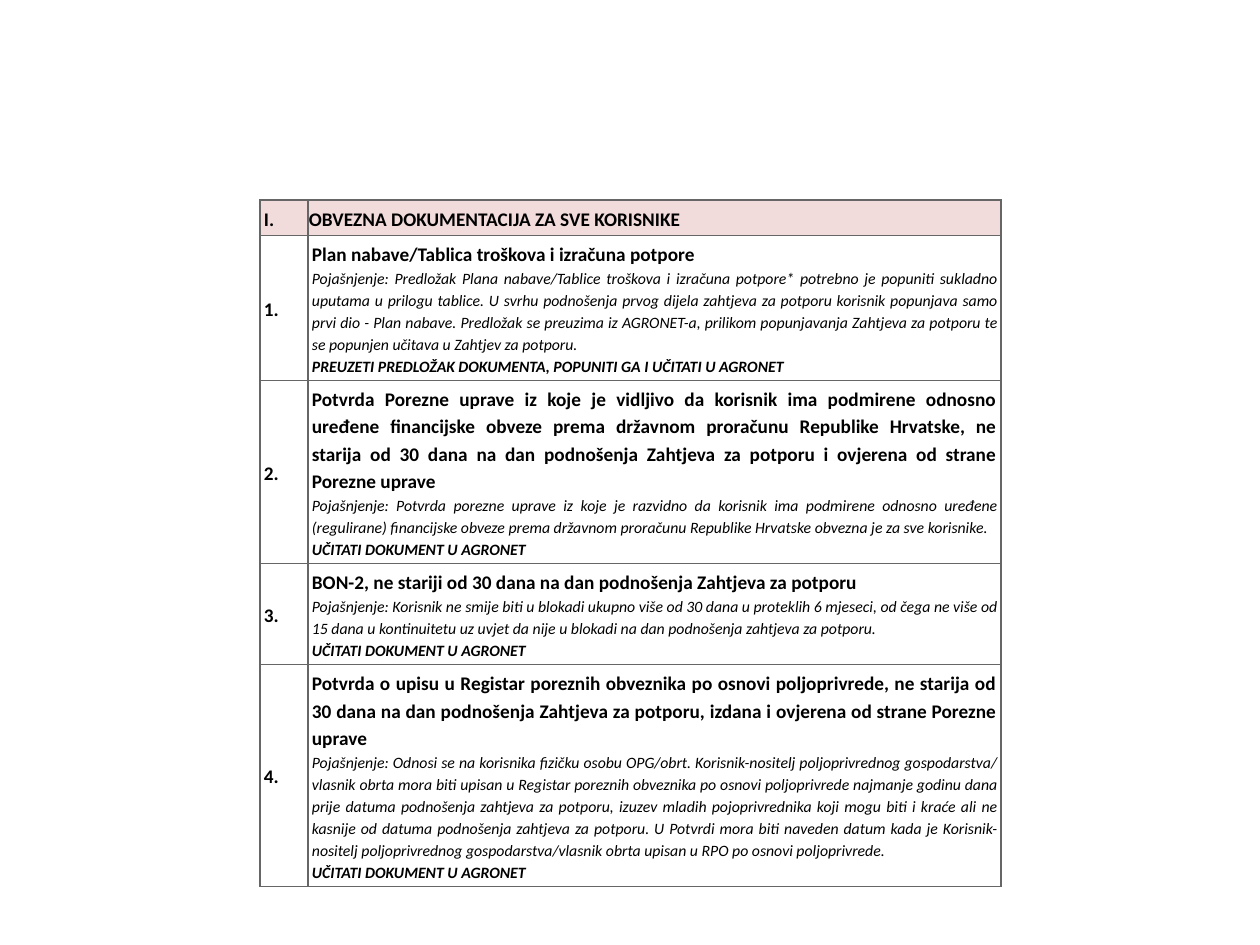
import pptx
import pptx.util
import pptx.dml.color
import pptx.enum.text
import pptx.oxml
import pptx.oxml.ns
from dataclasses import dataclass

PX = 914400 // 126


@dataclass(frozen=True)
class Theme:
    font: str = "Calibri"
    text: str = "000000"
    head: str = "F2DBDB"
    line: str = "666666"
    big: int = 11
    small: int = 9


theme = Theme()
color = pptx.dml.color.RGBColor.from_string


def border(cell):
    """Draw a 1 pt line on all four sides; call before setting the fill."""
    for side in ("L", "R", "T", "B"):
        cell._tc.get_or_add_tcPr().append(pptx.oxml.parse_xml(
            f'<a:ln{side} {pptx.oxml.ns.nsdecls("a")} w="12700">'
            f'<a:solidFill><a:srgbClr val="{theme.line}"/></a:solidFill>'
            f'</a:ln{side}>'))


def write(cell, lines, inset):
    """Fill a cell: first line is a bold heading, second a note, third a bold step."""
    cell.vertical_anchor = pptx.enum.text.MSO_ANCHOR.MIDDLE
    cell.margin_left = cell.margin_right = inset * PX
    cell.margin_top = cell.margin_bottom = inset * PX
    cell.text_frame.text = "\n".join(lines)
    for i, para in enumerate(cell.text_frame.paragraphs):
        para.alignment = pptx.enum.text.PP_ALIGN.JUSTIFY
        para.line_spacing = 1.15
        for run in para.runs:
            font = run.font
            font.name = theme.font
            font.size = pptx.util.Pt(theme.small if i else theme.big)
            font.bold = i != 1
            font.italic = i > 0
            font.color.rgb = color(theme.text)


load = "UČITATI DOKUMENT U AGRONET"
rows = [
    (34, "I.", ["OBVEZNA DOKUMENTACIJA ZA SVE KORISNIKE"]),
    (144, "1.", [
        "Plan nabave/Tablica troškova i izračuna potpore",
        "Pojašnjenje: Predložak Plana nabave/Tablice troškova i izračuna potpore* "
        "potrebno je popuniti sukladno uputama u prilogu tablice. U svrhu podnošenja "
        "prvog dijela zahtjeva za potporu korisnik popunjava samo prvi dio - Plan "
        "nabave. Predložak se preuzima iz AGRONET-a, prilikom popunjavanja Zahtjeva "
        "za potporu te se popunjen učitava u Zahtjev za potporu.",
        "PREUZETI PREDLOŽAK DOKUMENTA, POPUNITI GA I UČITATI U AGRONET"]),
    (182, "2.", [
        "Potvrda Porezne uprave iz koje je vidljivo da korisnik ima podmirene odnosno "
        "uređene financijske obveze prema državnom proračunu Republike Hrvatske, ne "
        "starija od 30 dana na dan podnošenja Zahtjeva za potporu i ovjerena od strane "
        "Porezne uprave",
        "Pojašnjenje: Potvrda porezne uprave iz koje je razvidno da korisnik ima "
        "podmirene odnosno uređene (regulirane) financijske obveze prema državnom "
        "proračunu Republike Hrvatske obvezna je za sve korisnike.",
        load]),
    (100, "3.", [
        "BON-2, ne stariji od 30 dana na dan podnošenja Zahtjeva za potporu",
        "Pojašnjenje: Korisnik ne smije biti u blokadi ukupno više od 30 dana u "
        "proteklih 6 mjeseci, od čega ne više od 15 dana u kontinuitetu uz uvjet da "
        "nije u blokadi na dan podnošenja zahtjeva za potporu.",
        load]),
    (221, "4.", [
        "Potvrda o upisu u Registar poreznih obveznika po osnovi poljoprivrede, ne "
        "starija od 30 dana na dan podnošenja Zahtjeva za potporu, izdana i ovjerena "
        "od strane Porezne uprave",
        "Pojašnjenje: Odnosi se na korisnika fizičku osobu OPG/obrt. Korisnik-nositelj "
        "poljoprivrednog gospodarstva/ vlasnik obrta mora biti upisan u Registar "
        "poreznih obveznika po osnovi poljoprivrede najmanje godinu dana prije datuma "
        "podnošenja zahtjeva za potporu, izuzev mladih pojoprivrednika koji mogu biti "
        "i kraće ali ne kasnije od datuma podnošenja zahtjeva za potporu. U Potvrdi "
        "mora biti naveden datum kada je Korisnik-nositelj poljoprivrednog "
        "gospodarstva/vlasnik obrta upisan u RPO po osnovi poljoprivrede.",
        load]),
]
widths = [48, 693]

deck = pptx.Presentation()
deck.slide_width, deck.slide_height = pptx.util.Inches(10), pptx.util.Inches(7.5)
slide = deck.slides.add_slide(deck.slide_layouts[6])

height = sum(row[0] for row in rows)
table = slide.shapes.add_table(len(rows), len(widths), 260 * PX, 200 * PX,
                               sum(widths) * PX, height * PX).table
table.first_row = table.horz_banding = False
for col, width in zip(table.columns, widths):
    col.width = width * PX

for r, (tall, label, lines) in enumerate(rows):
    table.rows[r].height = tall * PX
    for c, words in enumerate(([label], lines)):
        cell = table.cell(r, c)
        write(cell, words, 1 if (r, c) == (0, 1) else 4)
        border(cell)
        if r == 0:
            cell.fill.solid()
            cell.fill.fore_color.rgb = color(theme.head)
        else:
            cell.fill.background()

deck.save("out.pptx")
